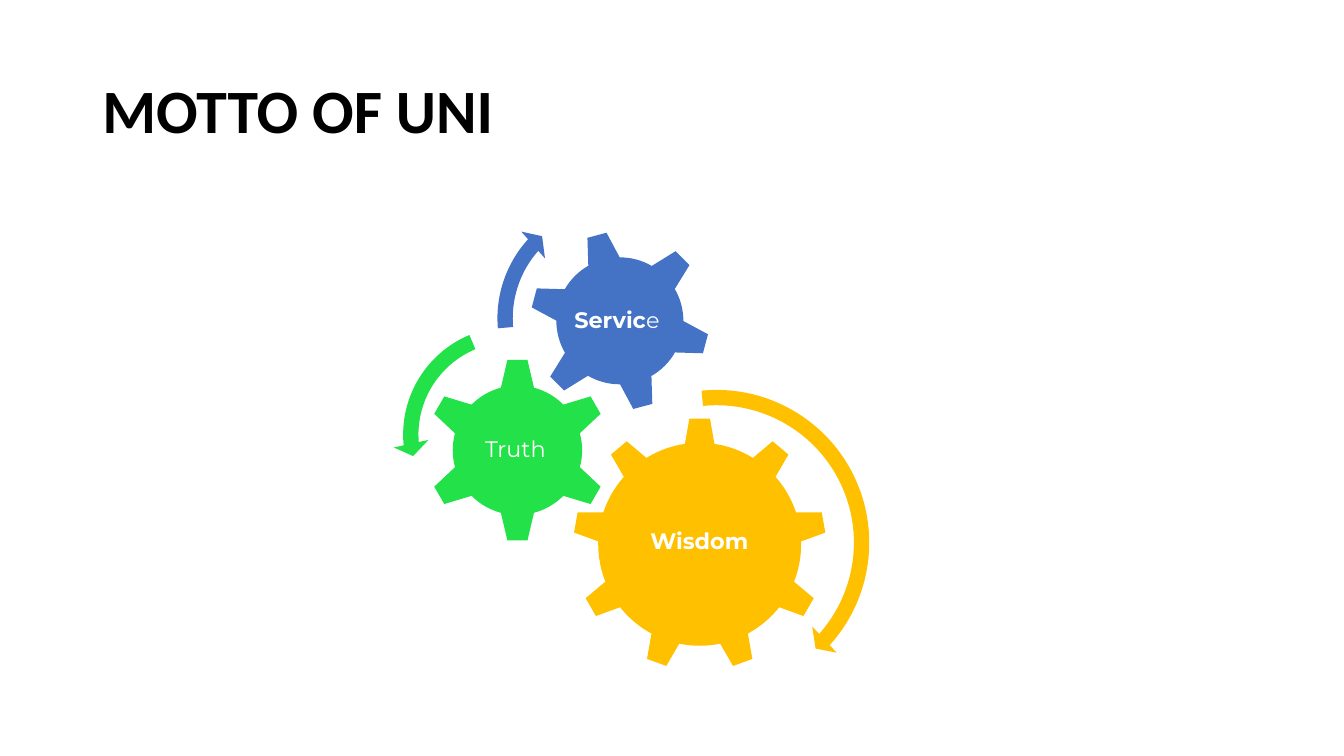
from pptx import Presentation, util as u
from pptx.dml.color import RGBColor
from pptx.enum import shapes, text

BLACK = RGBColor(0x00, 0x00, 0x00)
WHITE = RGBColor(0xFF, 0xFF, 0xFF)
GOLD = RGBColor(0xFF, 0xC0, 0x00)
GREEN = RGBColor(0x23, 0xE1, 0x48)
BLUE = RGBColor(0x44, 0x72, 0xC4)
SHAPE = shapes.MSO_SHAPE

deck = Presentation()
deck.slide_width, deck.slide_height = u.Inches(13.333), u.Inches(7.5)
slide = deck.slides.add_slide(deck.slide_layouts[6])
CELL = deck.slide_height / 9  # square grid: 16 columns by 9 rows


def add_words(runs, cells, font, size, color, align=text.PP_ALIGN.LEFT, inset=None):
    """Place (wording, bold) runs in a box given as column, row, columns, rows."""
    box = slide.shapes.add_textbox(*(round(n * CELL) for n in cells))
    frame = box.text_frame
    frame.word_wrap = True
    frame.vertical_anchor = text.MSO_ANCHOR.MIDDLE
    if inset is not None:
        frame.margin_left = frame.margin_right = inset
        frame.margin_top = frame.margin_bottom = inset
    line = frame.paragraphs[0]
    line.alignment, line.line_spacing = align, 0.9
    for wording, bold in runs:
        run = line.add_run()
        run.text = wording
        run.font.name, run.font.size = font, u.Pt(size)
        run.font.bold, run.font.color.rgb = bold, color


def add_part(preset, column, row, side, color):
    """Draw a flat square part of the gear train."""
    part = slide.shapes.add_shape(preset, *(round(n * CELL) for n in (column, row, side, side)))
    part.shadow.inherit = False
    part.fill.solid()
    part.fill.fore_color.rgb = color
    part.line.fill.background()
    return part


add_words([("MOTTO OF UNI", True)], (1.1, 0.48, 13.8, 1.74), "Calibri", 44, BLACK)

# preset, column, row, side, colour, rotation, runs, label cells
gears = [
    (SHAPE.GEAR_9, 6.82, 4.97, 3.02, GOLD, 0,
     [("Wisdom", True)], (7.42, 5.68, 1.81, 1.56)),
    (SHAPE.GEAR_6, 5.06, 4.26, 2.2, GREEN, 0,
     [("Truth", False)], (5.59, 4.82, 1.09, 1.08)),
    (SHAPE.GEAR_6, 6.3, 2.74, 2.16, BLUE, 345,
     [("Servic", True), ("e", False)], (6.74, 3.22, 1.21, 1.21)),
]
for preset, column, row, side, color, turn, runs, label_cells in gears:
    gear = add_part(preset, column, row, side, color)
    gear.rotation = turn
    add_words(runs, label_cells, "Montserrat", 16, WHITE,
              align=text.PP_ALIGN.CENTER, inset=u.Inches(0.02))

# preset, column, row, side, colour, band %, (head, end, start) degrees, head %
arrows = [
    (SHAPE.CIRCULAR_ARROW, 6.59, 4.52, 3.88, GOLD, 4.7, (4.98, 41.94, 264.36), 5.5),
    (SHAPE.LEFT_CIRCULAR_ARROW, 4.68, 3.77, 2.81, GREEN, 6.5, (7.17, 174.82, 247.3), 7.5),
    (SHAPE.CIRCULAR_ARROW, 5.8, 2.27, 3.04, BLUE, 6, (6.57, 221.9, 175.14), 7),
]
for preset, column, row, side, color, band, angles, head in arrows:
    arrow = add_part(preset, column, row, side, color)
    # one degree is 60000 angle units, and adjustments count in 100000
    settings = [band / 100, *(angle * 0.6 for angle in angles), head / 100]
    for index, setting in enumerate(settings):
        arrow.adjustments[index] = setting

deck.save("out.pptx")
